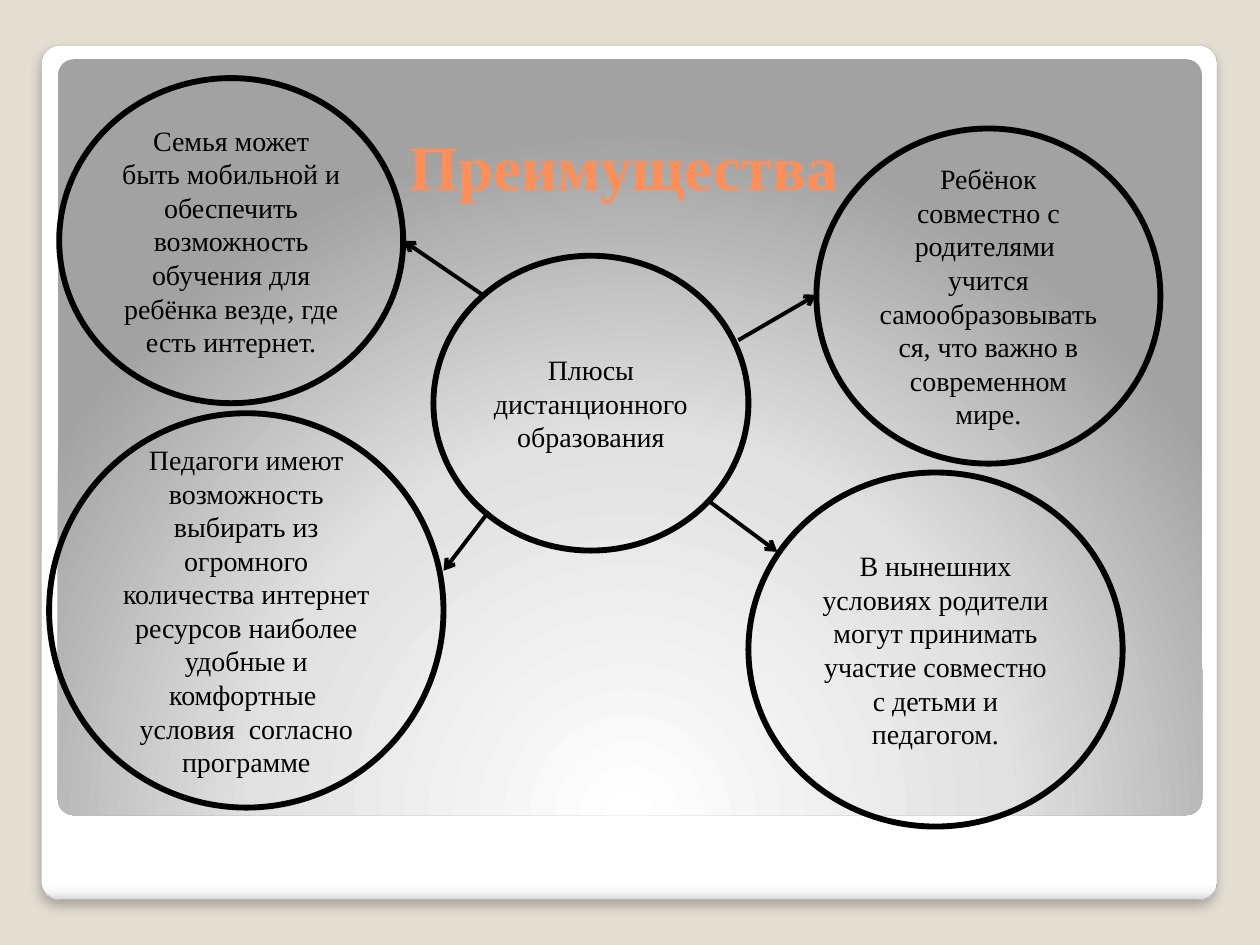
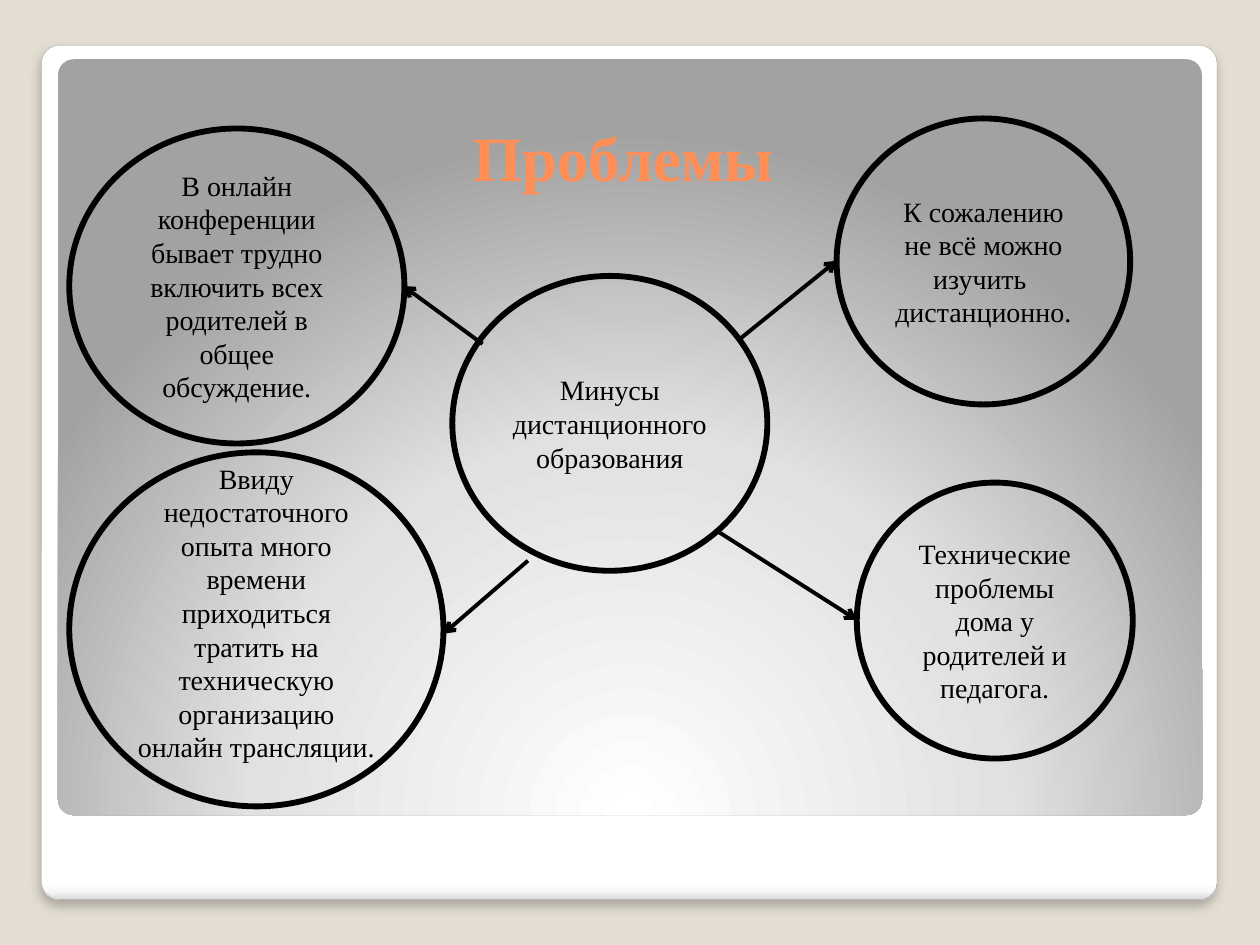
from lxml import etree
from pptx import Presentation
from pptx import util as u
from pptx.dml.color import RGBColor
from pptx.enum import shapes, text
from pptx.oxml import ns

BEIGE = RGBColor(0xE3, 0xDE, 0xD1)
GREY = RGBColor(0xA4, 0xA4, 0xA4)
ORANGE = RGBColor(0xFF, 0x8F, 0x56)
BLACK = RGBColor(0, 0, 0)
FONT = "Times New Roman"
A = ns.nsdecls("a")

CARD_FILL = (
    [(0, "FFFFFF"), (98, "FFFFFF"), (99, "F7F7F7"), (100, "DADADA")],
    '<a:lin ang="5400000" scaled="0"/>',
)
GLOW_FILL = (
    [(0, "FFFFFF"), (55, "E1E1E1"), (100, "A2A2A2")],
    '<a:path path="circle"><a:fillToRect l="50000" t="175000" r="50000" b="-75000"/></a:path>',
)
PANELS = [((0.33, 0.36, 9.33, 6.78), CARD_FILL), ((0.46, 0.47, 9.08, 6), GLOW_FILL)]
CARD_SHADOW = (
    f'<a:outerShdw {A} blurRad="76200" dist="50800" dir="5400000" algn="tl" rotWithShape="0">'
    '<a:srgbClr val="000000"><a:alpha val="25000"/></a:srgbClr></a:outerShdw>'
)

SLIDES = [
    {
        "title": "Преимущества",
        "title_top": 0.96,
        "circles": [
            (3.44, 2.03, 2.5, 2.34, "Плюсы дистанционного образования"),
            (6.48, 1.02, 2.73, 2.66, "Ребёнок совместно с родителями  учится "
             "самообразовываться, что важно в современном мире."),
            (0.47, 0.62, 2.73, 2.58, "Семья может быть мобильной и обеспечить "
             "возможность обучения для ребёнка везде, где есть интернет."),
            (0.39, 3.28, 3.13, 3.13, "Педагоги имеют возможность выбирать из огромного "
             "количества интернет ресурсов наиболее удобные и комфортные  условия  "
             "согласно программе"),
            (5.94, 3.75, 2.97, 2.81, "В нынешних условиях родители могут принимать "
             "участие совместно с детьми и педагогом."),
        ],
        "arrows": [
            (3.88, 4.06, 3.52, 4.53),
            (5.63, 3.98, 6.17, 4.38),
            (5.86, 2.7, 6.48, 2.34),
            (3.83, 2.34, 3.2, 1.91),
        ],
        "raised": None,
    },
    {
        "title": "Проблемы",
        "title_top": 0.89,
        "circles": [
            (3.59, 2.19, 2.5, 2.34, "Минусы\nдистанционного образования"),
            (6.64, 0.94, 2.33, 2.27, "К сожалению не всё можно изучить  дистанционно."),
            (0.55, 1.02, 2.66, 2.5, "В онлайн конференции бывает трудно включить всех "
             "родителей в общее обсуждение."),
            (0.55, 3.59, 2.97, 2.81, "Ввиду недостаточного опыта много времени "
             "приходиться тратить на техническую организацию онлайн трансляции."),
            (6.8, 3.83, 2.19, 2.19, "Технические проблемы дома у родителей и педагога."),
        ],
        "arrows": [
            (4.19, 4.45, 3.52, 5.03),
            (5.7, 4.22, 6.8, 4.92),
            (5.86, 2.7, 6.64, 2.07),
            (3.83, 2.73, 3.2, 2.27),
        ],
        "raised": 3,
    },
]


def set_gradient(shape, stops, direction):
    shape.fill.background()
    props = shape._element.spPr
    stop_xml = "".join(
        f'<a:gs pos="{pos * 1000}"><a:srgbClr val="{color}"/></a:gs>' for pos, color in stops
    )
    gradient = etree.fromstring(
        f'<a:gradFill {A} rotWithShape="1"><a:gsLst>{stop_xml}</a:gsLst>{direction}</a:gradFill>'
    )
    props.replace(props.find(ns.qn("a:noFill")), gradient)


def format_text(frame, size, color, bold=False):
    frame.vertical_anchor = text.MSO_ANCHOR.MIDDLE
    for paragraph in frame.paragraphs:
        paragraph.alignment = text.PP_ALIGN.CENTER
        for run in paragraph.runs:
            run.font.name = FONT
            run.font.size = u.Pt(size)
            run.font.bold = bold
            run.font.color.rgb = color


prs = Presentation()
prs.slide_width = u.Inches(10)
prs.slide_height = u.Inches(7.5)
layout = prs.slide_layouts[5]
layout.background.fill.solid()
layout.background.fill.fore_color.rgb = BEIGE

for number, content in enumerate(SLIDES):
    slide = prs.slides.add_slide(layout)

    if number == 0:
        for order, (box, fill) in enumerate(PANELS):
            panel = slide.shapes.add_shape(
                shapes.MSO_SHAPE.ROUNDED_RECTANGLE, *[u.Inches(v) for v in box]
            )
            panel.adjustments[0] = 0.021
            set_gradient(panel, *fill)
            panel.shadow.inherit = False
            if fill is CARD_FILL:
                panel.line.color.rgb = GREY
                panel.line.width = u.Pt(0.16)
                effects = panel._element.spPr.find(ns.qn("a:effectLst"))
                effects.append(etree.fromstring(CARD_SHADOW))
            else:
                panel.line.fill.background()
            layout.shapes._spTree.insert(2 + order, panel._element)

    title = slide.shapes.title
    title.left, title.top = u.Inches(3.2), u.Inches(content["title_top"])
    title.width, title.height = u.Inches(3.5), u.Inches(0.7)
    title.text_frame.text = content["title"]
    title.text_frame.margin_left = title.text_frame.margin_right = 0
    title.text_frame.word_wrap = False
    format_text(title.text_frame, 36, ORANGE, bold=True)

    for index, (left, top, width, height, statement) in enumerate(content["circles"]):
        circle = slide.shapes.add_shape(
            shapes.MSO_SHAPE.OVAL, *[u.Inches(v) for v in (left, top, width, height)]
        )
        circle.shadow.inherit = False
        circle.fill.background()
        circle.line.color.rgb = BLACK
        circle.line.width = u.Pt(3.35)
        circle.text_frame.text = statement
        circle.text_frame.word_wrap = True
        if index == content["raised"]:
            circle.text_frame.margin_bottom = u.Inches(0.32)
        format_text(circle.text_frame, 16, BLACK)

    for ends in content["arrows"]:
        arrow = slide.shapes.add_connector(
            shapes.MSO_CONNECTOR.STRAIGHT, *[u.Inches(v) for v in ends]
        )
        arrow.line.color.rgb = BLACK
        arrow.line.width = u.Pt(2.25)
        etree.SubElement(arrow.line._get_or_add_ln(), ns.qn("a:tailEnd"), type="arrow")
        etree.SubElement(arrow._element.spPr, ns.qn("a:effectLst"))

prs.save("out.pptx")
